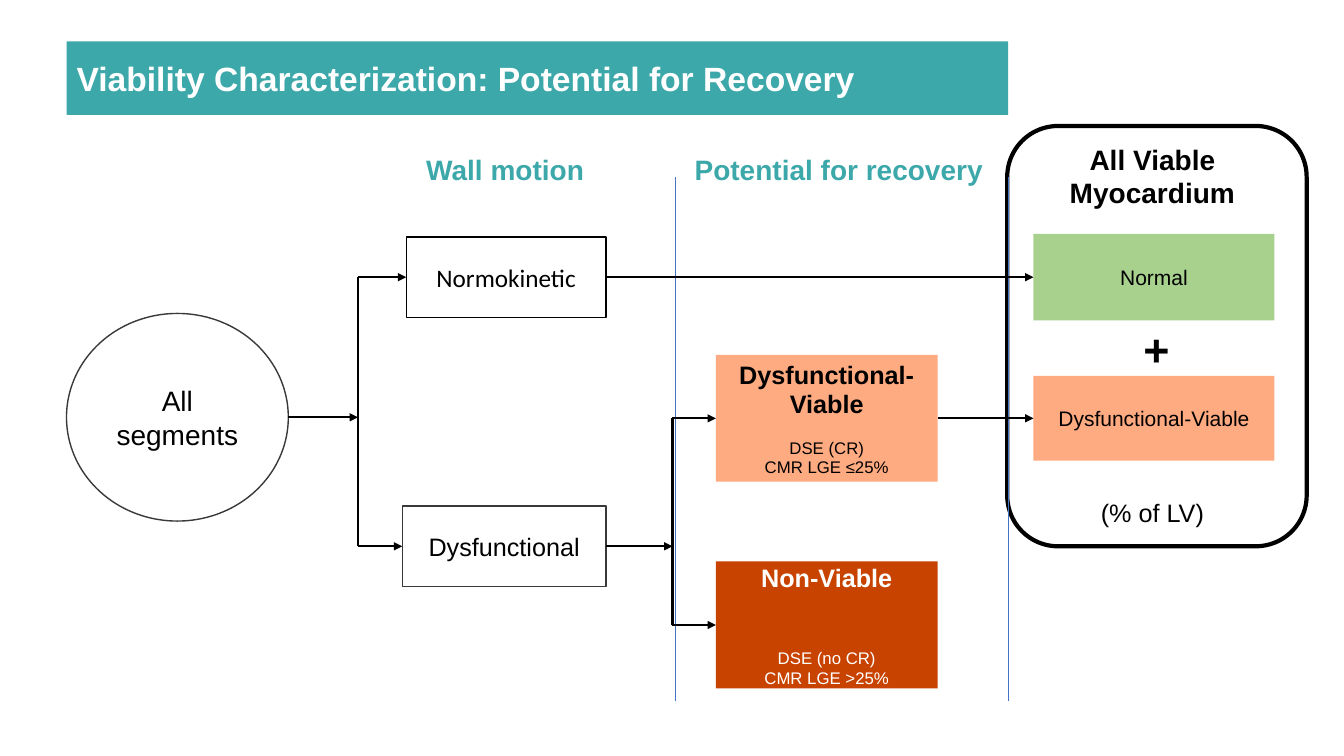
from dataclasses import dataclass
from typing import Optional

from lxml.etree import SubElement
from pptx import Presentation
from pptx.dml.color import RGBColor
from pptx.enum.shapes import MSO_CONNECTOR, MSO_SHAPE
from pptx.enum.text import MSO_ANCHOR, MSO_AUTO_SIZE, PP_ALIGN
from pptx.oxml.ns import qn
from pptx.util import Pt

PX = 9144
TEAL, BLACK, WHITE = "3DA8AA", "000000", "FFFFFF"
PEACH, RUST, GREEN = "FFAB81", "C84300", "A9D18E"
CHARCOAL, BLUE = "3B3838", "4472C4"
LEFT, RIGHT = 1, 3


@dataclass
class Line:
    text: str
    size: int
    bold: bool = False
    color: str = BLACK
    font: str = "Arial"
    before: int = 0
    spacing: Optional[float] = None


@dataclass
class Node:
    name: str
    area: tuple[int, int, int, int]
    lines: tuple[Line, ...] = ()
    preset: Optional[MSO_SHAPE] = MSO_SHAPE.RECTANGLE
    fill: Optional[str] = None
    outline: Optional[str] = None
    weight: float = 1
    top_inset: Optional[int] = None


@dataclass
class Link:
    start: tuple[int, int]
    end: tuple[int, int]
    source: Optional[str] = None
    target: Optional[str] = None
    arrow: bool = True
    color: str = BLACK
    weight: float = 1.5


NODES = [
    Node("segments", (66, 311, 220, 206), (Line("All\vsegments", 20),),
         MSO_SHAPE.OVAL, outline=CHARCOAL),
    Node("dysfunctional", (399, 502, 202, 80), (Line("Dysfunctional", 18),),
         outline=CHARCOAL),
    Node("normokinetic", (403, 235, 198, 80),
         (Line("Normokinetic", 18, font="Calibri"),), outline=BLACK),
    Node("wall motion", (413, 150, 176, 36),
         (Line("Wall motion", 20, True, TEAL),), None),
    Node("recovery", (682, 150, 300, 36),
         (Line("Potential for recovery", 20, True, TEAL),), None),
    Node("viable", (710, 352, 220, 126),
         (Line("Dysfunctional- Viable", 18, True, spacing=21.1),
          Line("DSE (CR)\vCMR LGE ≤25%", 12, before=14, spacing=13.9)),
         fill=PEACH, top_inset=5),
    Node("non-viable", (710, 557, 220, 126),
         (Line("Non-Viable", 18, True, WHITE),
          Line("DSE (no CR)\vCMR LGE >25%", 12, color=WHITE, before=40, spacing=13.9)),
         fill=RUST, top_inset=1),
    Node("viable share", (1025, 373, 239, 84), (Line("Dysfunctional-Viable", 15),),
         fill=PEACH),
    Node("normal share", (1025, 232, 239, 86), (Line("Normal", 15),), fill=GREEN),
    Node("all viable", (999, 125, 297, 417), preset=MSO_SHAPE.ROUNDED_RECTANGLE,
         outline=BLACK, weight=3),
    Node("all viable heading", (1058, 140, 170, 69),
         (Line("All Viable Myocardium", 20, True),), None),
    Node("plus", (1128, 318, 38, 56), (Line("+", 32, True),), None),
    Node("percentage", (1085, 492, 116, 33), (Line("(% of LV)", 18),), None),
]

DIVIDERS = [Link((x, 176), (x, 695), arrow=False, color=BLUE, weight=0.75)
            for x in (670, 1000)]
LINKS = DIVIDERS + [
    Link((286, 414), (355, 414)),
    Link((355, 275), (355, 542), arrow=False),
    Link((355, 275), (403, 275), target="normokinetic"),
    Link((355, 542), (399, 542), target="dysfunctional"),
    Link((601, 542), (667, 542), source="dysfunctional"),
    Link((667, 415), (667, 620), arrow=False),
    Link((667, 415), (710, 415), target="viable"),
    Link((667, 620), (710, 620), target="non-viable"),
    Link((601, 275), (1025, 275), source="normokinetic", target="normal share"),
    Link((930, 415), (1025, 415), source="viable", target="viable share"),
]


def rgb(color: str) -> RGBColor:
    return RGBColor.from_string(color)


def apply(target, formats: dict) -> None:
    for name, value in formats.items():
        setattr(target, name, value)


def write(box, lines: tuple[Line, ...], align=PP_ALIGN.CENTER,
          left_inset: int = 0, top_inset: Optional[int] = None) -> None:
    frame = box.text_frame
    apply(frame, {
        "word_wrap": True,
        "auto_size": MSO_AUTO_SIZE.NONE,
        "vertical_anchor": MSO_ANCHOR.MIDDLE if top_inset is None else MSO_ANCHOR.TOP,
        "margin_left": left_inset * PX,
        "margin_top": (top_inset or 0) * PX,
        "margin_right": 0,
        "margin_bottom": 0,
    })
    for index, line in enumerate(lines):
        para = frame.add_paragraph() if index else frame.paragraphs[0]
        para.text = line.text
        para.alignment = align
        if line.before:
            para.space_before = Pt(line.before)
        if line.spacing:
            para.line_spacing = Pt(line.spacing)
        for span in para.runs:
            apply(span.font, {"name": line.font, "size": Pt(line.size),
                              "bold": line.bold})
            span.font.color.rgb = rgb(line.color)


def draw_node(page, node: Node):
    area = [value * PX for value in node.area]
    if node.preset is None:
        box = page.shapes.add_textbox(*area)
    else:
        box = page.shapes.add_shape(node.preset, *area)
        box.shadow.inherit = False
        if node.preset == MSO_SHAPE.ROUNDED_RECTANGLE:
            box.adjustments[0] = 0.17
        if node.fill:
            box.fill.solid()
            box.fill.fore_color.rgb = rgb(node.fill)
        else:
            box.fill.background()
        if node.outline:
            box.line.color.rgb = rgb(node.outline)
            box.line.width = Pt(node.weight)
        else:
            box.line.fill.background()
    if node.lines:
        write(box, node.lines, top_inset=node.top_inset)
    return box


def draw_link(page, link: Link, boxes: dict) -> None:
    ends = [value * PX for value in link.start + link.end]
    connector = page.shapes.add_connector(MSO_CONNECTOR.STRAIGHT, *ends)
    connector.line.color.rgb = rgb(link.color)
    connector.line.width = Pt(link.weight)
    if link.source:
        connector.begin_connect(boxes[link.source], RIGHT)
    if link.target:
        connector.end_connect(boxes[link.target], LEFT)
    if link.arrow:
        SubElement(connector.line._get_or_add_ln(), qn("a:tailEnd"), type="triangle")
    SubElement(connector._element.spPr, qn("a:effectLst"))


def draw_title(page) -> None:
    title = page.shapes.title
    apply(title, {"left": 66 * PX, "top": 41 * PX,
                  "width": 934 * PX, "height": 73 * PX})
    title.fill.solid()
    title.fill.fore_color.rgb = rgb(TEAL)
    heading = Line("Viability Characterization: Potential for Recovery", 24, True, WHITE)
    write(title, (heading,), PP_ALIGN.LEFT, left_inset=10)


def main() -> None:
    deck = Presentation()
    apply(deck, {"slide_width": 1333 * PX, "slide_height": 750 * PX})
    page = deck.slides.add_slide(deck.slide_layouts[5])
    draw_title(page)
    boxes = {node.name: draw_node(page, node) for node in NODES}
    for link in LINKS:
        draw_link(page, link, boxes)
    deck.save("out.pptx")


if __name__ == "__main__":
    main()
